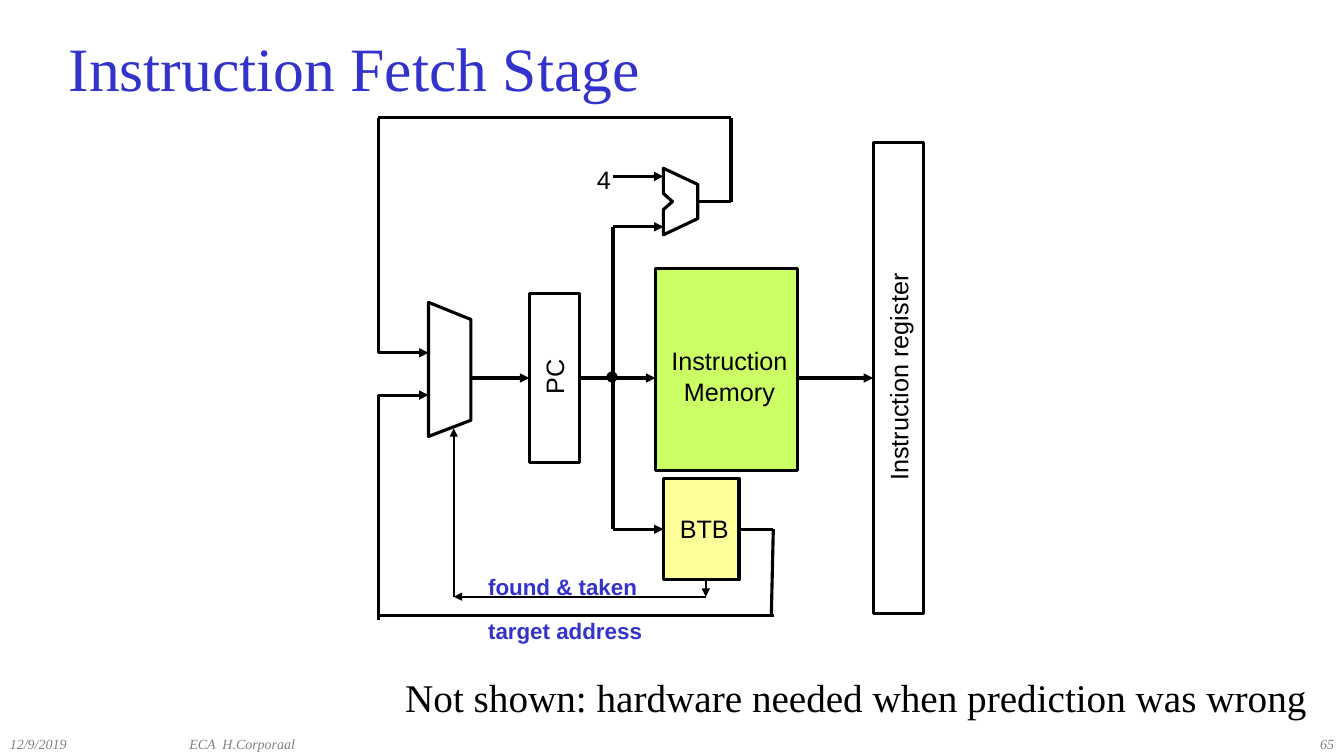
from dataclasses import dataclass
from typing import Optional

from lxml import etree
from pptx import Presentation
from pptx.dml.color import RGBColor
from pptx.enum import shapes, text
from pptx.oxml import ns
from pptx.util import Inches, Pt

COLORS = {"blue": "3333CC", "black": "000000", "gray": "808080",
          "green": "CCFF66", "yellow": "FFFF99"}
SERIF, SANS = "Times New Roman", "Arial"
LEFT, CENTER, RIGHT = text.PP_ALIGN.LEFT, text.PP_ALIGN.CENTER, text.PP_ALIGN.RIGHT
LEFT_SIDE, RIGHT_SIDE = 1, 3
RECT, OVAL = shapes.MSO_SHAPE.RECTANGLE, shapes.MSO_SHAPE.OVAL


@dataclass
class Block:
    name: str
    at: tuple
    fill: Optional[str] = None
    kind: int = RECT


@dataclass
class Wire:
    start: tuple
    end: tuple
    arrow: bool = False
    source: str = ""
    target: str = ""
    width: float = 2.25


@dataclass
class Label:
    words: str
    at: tuple
    size: int = 18
    color: str = "black"
    font: str = SANS
    align: int = CENTER
    bold: bool = False
    italic: bool = False
    wrap: bool = False
    rotation: int = 0


BLOCKS = [
    Block("memory", (6.5, 2.66, 1.41, 2.01), "green"),
    Block("pc", (5.25, 2.91, 0.5, 1.68)),
    Block("register", (8.66, 1.41, 0.5, 4.68)),
    Block("btb", (6.58, 4.75, 0.75, 1), "yellow"),
]
JUNCTION = Block("junction", (6.03, 3.7, 0.08, 0.08), "black", OVAL)

ADDER = [(6.58, 1.67), (6.58, 1.92), (6.67, 2), (6.58, 2.08),
         (6.58, 2.33), (6.92, 2.17), (6.92, 1.83)]
MUX = [(4.25, 3), (4.25, 4.33), (4.67, 4.17), (4.67, 3.17)]

WIRES = [
    Wire((4.67, 3.75), (5.25, 3.75), True, target="pc"),
    Wire((5.75, 3.75), (6.5, 3.75), True, source="pc"),
    Wire((7.91, 3.75), (8.66, 3.75), True, target="register"),
    Wire((6.08, 1.75), (6.58, 1.75), True),
    Wire((6.08, 2.25), (6.58, 2.25), True),
    Wire((6.08, 2.25), (6.08, 3.75)),
    Wire((6.08, 3.75), (6.08, 5.25)),
    Wire((6.08, 5.25), (6.58, 5.25), True, target="btb"),
    Wire((7.25, 2), (6.92, 2)),
    Wire((7.25, 1.17), (7.25, 2)),
    Wire((3.75, 1.17), (7.25, 1.17)),
    Wire((3.75, 3.5), (3.75, 1.17)),
    Wire((3.75, 3.5), (4.25, 3.5), True),
    Wire((7.33, 5.25), (7.67, 5.25), source="btb"),
    Wire((7.67, 5.25), (7.65, 6.11)),
    Wire((7.68, 6.11), (3.76, 6.11)),
    Wire((3.75, 3.92), (3.75, 6.15)),
    Wire((3.75, 3.92), (4.25, 3.92), True),
    Wire((7, 5.75), (7, 5.92), True, width=1.5),
    Wire((7, 5.92), (4.5, 5.92), True, width=1.5),
    Wire((4.5, 5.92), (4.5, 4.25), True, width=1.5),
]

FOOTER = dict(size=10, color="gray", font=SERIF, italic=True, wrap=True)
LABELS = [
    Label("12/9/2019", (0, 7.25, 1.78, 0.25), align=LEFT, **FOOTER),
    Label("ECA  H.Corporaal", (1.78, 7.25, 4.22, 0.25), align=LEFT, **FOOTER),
    Label("65", (10.56, 7.25, 2.77, 0.25), align=RIGHT, **FOOTER),
    Label("Not shown: hardware needed when prediction was wrong",
          (3.92, 6.63, 9.41, 0.58), 28, font=SERIF, align=LEFT, wrap=True),
    Label("Instruction\nMemory", (6.56, 3.38, 1.35, 0.7)),
    Label("PC", (5.22, 3.54, 0.55, 0.4), rotation=270),
    Label("Instruction register", (7.78, 3.54, 2.26, 0.4), rotation=270),
    Label("4", (5.82, 1.58, 0.34, 0.4)),
    Label("BTB", (6.64, 5.04, 0.69, 0.4)),
    Label("found & taken", (4.74, 5.64, 1.68, 0.37), 16, "blue", bold=True),
    Label("target address", (4.74, 6.07, 1.73, 0.37), 16, "blue", bold=True),
]


def rgb(name: str) -> RGBColor:
    return RGBColor.from_string(COLORS[name])


def style_shape(sp, fill: Optional[str] = None) -> None:
    sp.shadow.inherit = False
    if fill:
        sp.fill.solid()
        sp.fill.fore_color.rgb = rgb(fill)
    else:
        sp.fill.background()
    sp.line.color.rgb = rgb("black")
    sp.line.width = Pt(2.25)


def add_block(s, block: Block):
    sp = s.shapes.add_shape(block.kind, *map(Inches, block.at))
    style_shape(sp, block.fill)
    return sp


def add_outline(s, points: list) -> None:
    corners = [(Inches(x), Inches(y)) for x, y in points]
    builder = s.shapes.build_freeform(*corners[0])
    builder.add_line_segments(corners[1:], close=True)
    style_shape(builder.convert_to_shape())


def add_wire(s, wire: Wire, blocks: dict) -> None:
    cx = s.shapes.add_connector(shapes.MSO_CONNECTOR.STRAIGHT,
                                *map(Inches, wire.start + wire.end))
    if wire.source:
        cx.begin_connect(blocks[wire.source], RIGHT_SIDE)
    if wire.target:
        cx.end_connect(blocks[wire.target], LEFT_SIDE)
    cx.line.color.rgb = rgb("black")
    cx.line.width = Pt(wire.width)
    if wire.arrow:
        etree.SubElement(cx.line._get_or_add_ln(), ns.qn("a:tailEnd"), type="triangle")
    etree.SubElement(cx._element.spPr, ns.qn("a:effectLst"))


def format_text(tf, label: Label) -> None:
    tf.text = label.words
    tf.word_wrap = label.wrap
    for p in tf.paragraphs:
        p.alignment = label.align
        for r in p.runs:
            r.font.name = label.font
            r.font.size = Pt(label.size)
            r.font.bold = label.bold
            r.font.italic = label.italic
            r.font.color.rgb = rgb(label.color)


def add_label(s, label: Label) -> None:
    sp = s.shapes.add_textbox(*map(Inches, label.at))
    sp.rotation = label.rotation
    format_text(sp.text_frame, label)


def add_title(s, label: Label) -> None:
    sp = s.shapes.title
    sp.left, sp.top, sp.width, sp.height = map(Inches, label.at)
    format_text(sp.text_frame, label)
    sp.text_frame.vertical_anchor = text.MSO_ANCHOR.MIDDLE


def main() -> None:
    prs = Presentation()
    prs.slide_width, prs.slide_height = Inches(13.33), Inches(7.5)
    s = prs.slides.add_slide(prs.slide_layouts[5])
    add_title(s, Label("Instruction Fetch Stage", (0.58, 0.25, 12.44, 0.83),
                       44, "blue", SERIF, LEFT, wrap=True))
    blocks = {block.name: add_block(s, block) for block in BLOCKS}
    add_outline(s, ADDER)
    add_outline(s, MUX)
    for wire in WIRES:
        add_wire(s, wire, blocks)
    add_block(s, JUNCTION)
    for label in LABELS:
        add_label(s, label)
    prs.save("out.pptx")


if __name__ == "__main__":
    main()
